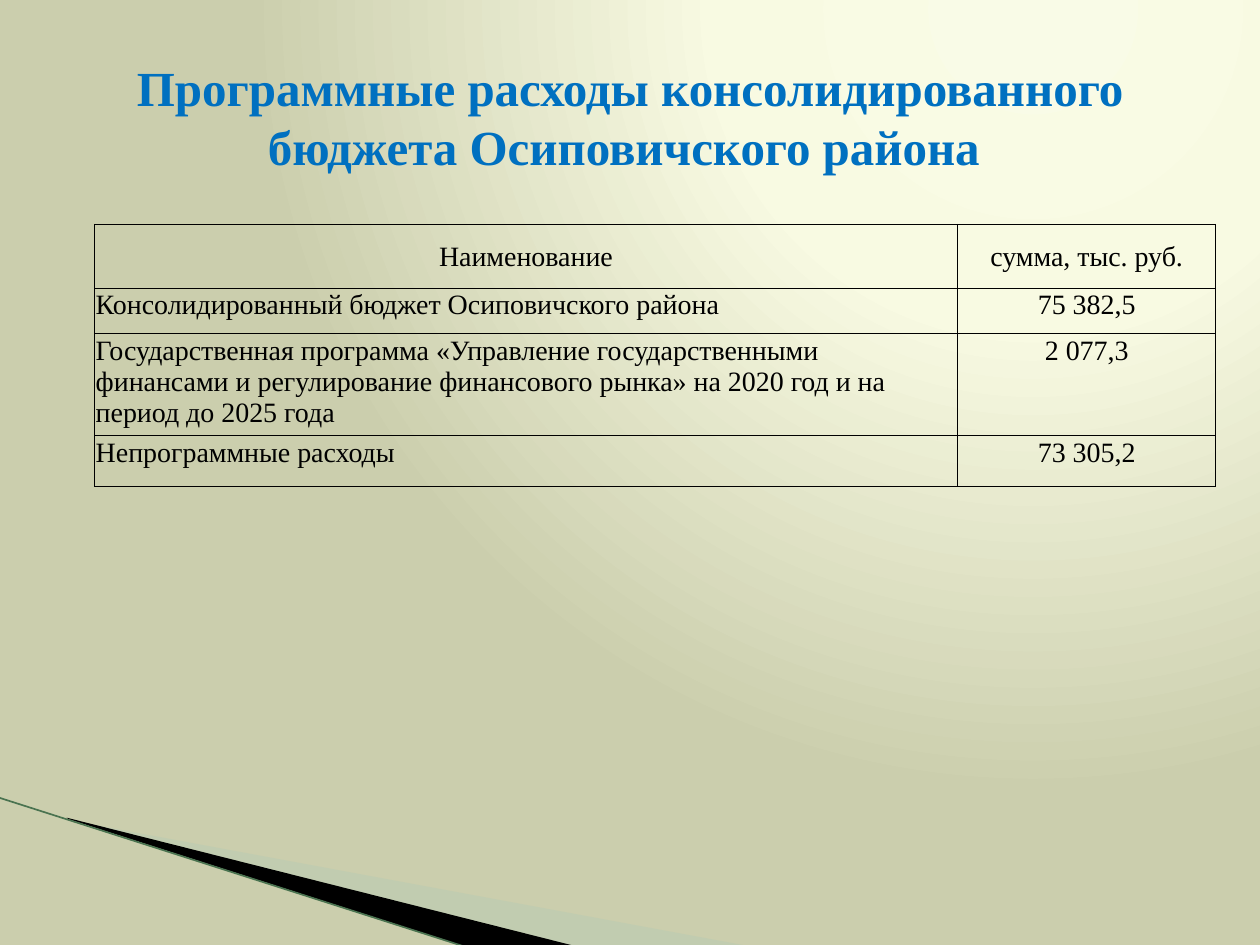
"""Builds a slide with the programme spending of a district budget."""
from lxml import etree
from pptx import Presentation
from pptx.dml.color import RGBColor
from pptx.enum.shapes import MSO_CONNECTOR
from pptx.enum.text import MSO_ANCHOR, PP_ALIGN
from pptx.oxml import parse_xml
from pptx.oxml.ns import nsdecls, qn
from pptx.util import Inches, Pt

TITLE = "Программные расходы консолидированного бюджета Осиповичского района "
ROWS = [
    ("Наименование", "сумма, тыс. руб."),
    ("Консолидированный бюджет Осиповичского района", "75 382,5"),
    ("Государственная программа «Управление государственными финансами и "
     "регулирование финансового рынка» на 2020 год и на период до 2025 года", "2 077,3"),
    ("Непрограммные расходы", "73 305,2"),
]
COLUMN_WIDTHS = [6.85, 2.05]
ROW_HEIGHTS = [0.51, 0.36, 0.75, 0.4]
FONT = "Times New Roman"
COLORS = {
    "title": "0070C0", "text": "000000", "border": "000000",
    "pale wedge": "B3CBB5", "dark wedge": "000000", "edge": "4A7350",
}
GRADIENT = [(0, "F9FBE7"), (40, "F8FAE2"), (100, "CBCEAD")]
WEDGES = [
    ("pale wedge", 40, [(0.55, 6.51), (5.95, 7.51), (4.56, 7.51), (0.55, 6.5)]),
    ("dark wedge", 100, [(0.53, 6.49), (4.57, 7.51), (3.72, 7.52), (0.54, 6.5)]),
]
EDGE = [(-0.01, 6.33), (3.71, 7.52)]


def color(name):
    return RGBColor.from_string(COLORS[name])


def set_background(slide):
    stops = "".join(
        f'<a:gs pos="{position * 1000}"><a:srgbClr val="{value}"/></a:gs>'
        for position, value in GRADIENT)
    background = parse_xml(
        f'<p:bg {nsdecls("p", "a")}><p:bgPr><a:gradFill rotWithShape="1">'
        f'<a:gsLst>{stops}</a:gsLst><a:path path="circle">'
        '<a:fillToRect l="65000" t="0" r="0" b="98000"/></a:path></a:gradFill>'
        '<a:effectLst/></p:bgPr></p:bg>')
    slide.element.cSld.insert(0, background)


def add_wedge(slide, name, opacity, points):
    start, *others = [(Inches(x), Inches(y)) for x, y in points]
    builder = slide.shapes.build_freeform(*start)
    builder.add_line_segments(others, close=True)
    shape = builder.convert_to_shape()
    shape.shadow.inherit = False
    shape.fill.solid()
    shape.fill.fore_color.rgb = color(name)
    shape.line.fill.background()
    if opacity < 100:
        fill_color = shape.element.spPr.find(qn("a:solidFill"))[0]
        etree.SubElement(fill_color, qn("a:alpha"), val=str(opacity * 1000))


def add_edge(slide):
    ends = [Inches(value) for point in EDGE for value in point]
    connector = slide.shapes.add_connector(MSO_CONNECTOR.STRAIGHT, *ends)
    connector.line.color.rgb = color("edge")
    connector.line.width = Pt(0.95)
    etree.SubElement(connector.element.spPr, qn("a:effectLst"))


def write(text_frame, text, size, name, alignment, bold=False):
    text_frame.text = text
    paragraph = text_frame.paragraphs[0]
    paragraph.alignment = alignment
    font = paragraph.runs[0].font
    font.name, font.size, font.bold = FONT, Pt(size), bold
    font.color.rgb = color(name)


def add_title(slide):
    box = slide.shapes.add_textbox(Inches(0.5), Inches(0.3), Inches(9), Inches(1.25))
    box.text_frame.word_wrap = True
    box.text_frame.vertical_anchor = MSO_ANCHOR.MIDDLE
    write(box.text_frame, TITLE, 28, "title", PP_ALIGN.CENTER, bold=True)


def set_borders(cell):
    properties = cell._tc.get_or_add_tcPr()
    for index, side in enumerate(("lnL", "lnR", "lnT", "lnB")):
        properties.insert(index, parse_xml(
            f'<a:{side} {nsdecls("a")} w="{Pt(0.5)}"><a:solidFill>'
            f'<a:srgbClr val="{COLORS["border"]}"/></a:solidFill></a:{side}>'))


def add_budget_table(slide):
    table = slide.shapes.add_table(
        len(ROWS), len(COLUMN_WIDTHS), Inches(0.75), Inches(1.78),
        Inches(sum(COLUMN_WIDTHS)), Inches(sum(ROW_HEIGHTS))).table
    table.first_row = table.horz_banding = False
    for column, width in zip(table.columns, COLUMN_WIDTHS):
        column.width = Inches(width)
    for row, height in zip(table.rows, ROW_HEIGHTS):
        row.height = Inches(height)
    for row_index, values in enumerate(ROWS):
        for column_index, value in enumerate(values):
            cell = table.cell(row_index, column_index)
            is_header = row_index == 0
            centered = is_header or column_index == 1
            cell.margin_left = cell.margin_right = cell.margin_top = Inches(0.01)
            cell.margin_bottom = 0
            cell.vertical_anchor = MSO_ANCHOR.MIDDLE if is_header else MSO_ANCHOR.TOP
            cell.fill.background()
            set_borders(cell)
            write(cell.text_frame, value, 16, "text",
                  PP_ALIGN.CENTER if centered else PP_ALIGN.LEFT)


def main():
    presentation = Presentation()
    presentation.slide_width, presentation.slide_height = Inches(10), Inches(7.5)
    slide = presentation.slides.add_slide(presentation.slide_layouts[6])
    set_background(slide)
    for wedge in WEDGES:
        add_wedge(slide, *wedge)
    add_edge(slide)
    add_title(slide)
    add_budget_table(slide)
    presentation.save("out.pptx")


if __name__ == "__main__":
    main()
